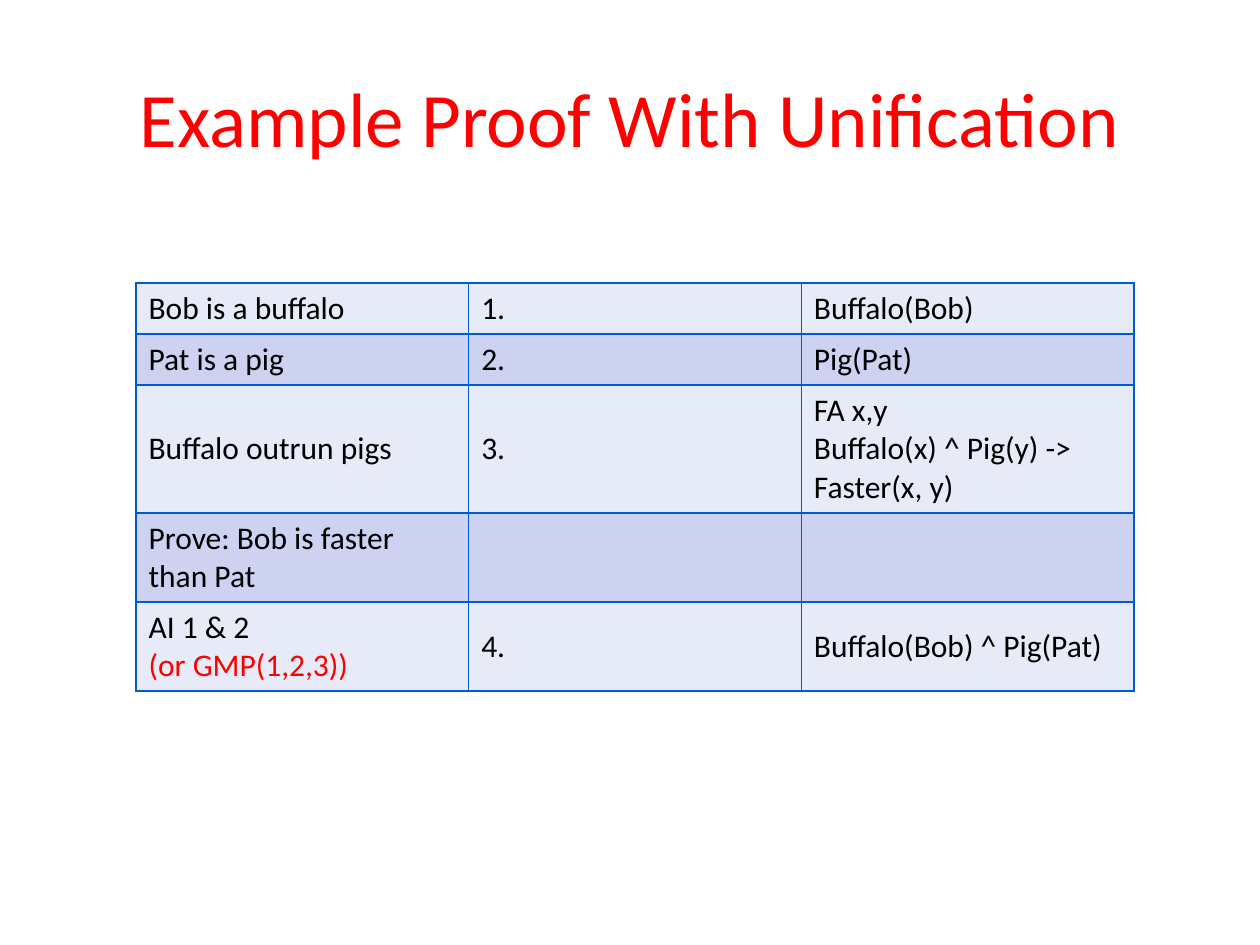
import dataclasses

import pptx
import pptx.dml.color
import pptx.enum.text
import pptx.oxml
import pptx.oxml.ns
import pptx.util

PX = 914400 / 126
FONT = "Calibri"
COLORS = {
    "title": "FF0000",
    "text": "000000",
    "accent": "FF0000",
    "border": "005BD3",
    "light": "E7EAF7",
    "dark": "CCD2EF",
}
BORDER_SIDES = ("lnL", "lnR", "lnT", "lnB")


@dataclasses.dataclass(frozen=True)
class Line:
    text: str
    color: str = "text"


@dataclasses.dataclass(frozen=True)
class ProofStep:
    height: int
    claim: tuple[Line, ...]
    number: tuple[Line, ...] = ()
    formula: tuple[Line, ...] = ()


STEPS = (
    ProofStep(51, (Line("Bob is a buffalo"),), (Line("1."),), (Line("Buffalo(Bob)"),)),
    ProofStep(51, (Line("Pat is a pig"),), (Line("2."),), (Line("Pig(Pat)"),)),
    ProofStep(
        128,
        (Line("Buffalo outrun pigs"),),
        (Line("3."),),
        (Line("FA x,y"), Line("Buffalo(x) ^ Pig(y) -> Faster(x, y)")),
    ),
    ProofStep(89, (Line("Prove: Bob is faster than Pat"),)),
    ProofStep(
        89,
        (Line("AI 1 & 2"), Line("(or GMP(1,2,3))", "accent")),
        (Line("4."),),
        (Line("Buffalo(Bob) ^ Pig(Pat)"),),
    ),
)


def px(length: int) -> pptx.util.Emu:
    return pptx.util.Emu(round(length * PX))


def rgb(name: str) -> pptx.dml.color.RGBColor:
    return pptx.dml.color.RGBColor.from_string(COLORS[name])


def write_lines(paragraph, lines: tuple[Line, ...], size: int) -> None:
    """Write the lines into one paragraph, with line breaks between them."""
    for index, line in enumerate(lines):
        if index:
            paragraph.add_line_break()
        span = paragraph.add_run()
        span.text = line.text
        span.font.color.rgb = rgb(line.color)
        for name, value in {"name": FONT, "size": pptx.util.Pt(size)}.items():
            setattr(span.font, name, value)


def add_title(page, text: str) -> None:
    box = page.shapes.add_textbox(px(63), px(38), px(1134), px(158))
    frame_format = {
        "word_wrap": True,
        "vertical_anchor": pptx.enum.text.MSO_ANCHOR.MIDDLE,
    }
    for name, value in frame_format.items():
        setattr(box.text_frame, name, value)
    para = box.text_frame.paragraphs[0]
    para.alignment = pptx.enum.text.PP_ALIGN.CENTER
    write_lines(para, (Line(text, "title"),), 44)


def fill_cell(cell, lines: tuple[Line, ...], fill: str) -> None:
    cell.vertical_anchor = pptx.enum.text.MSO_ANCHOR.MIDDLE
    write_lines(cell.text_frame.paragraphs[0], lines, 18)
    properties = cell._tc.get_or_add_tcPr()
    for side in BORDER_SIDES:
        properties.append(pptx.oxml.parse_xml(
            f'<a:{side} {pptx.oxml.ns.nsdecls("a")} w="12700"><a:solidFill>'
            f'<a:srgbClr val="{COLORS["border"]}"/></a:solidFill></a:{side}>'
        ))
    cell.fill.solid()
    cell.fill.fore_color.rgb = rgb(fill)


def add_proof_table(page, steps: tuple[ProofStep, ...]) -> None:
    height = sum(step.height for step in steps)
    table = page.shapes.add_table(
        len(steps), 3, px(136), px(283), px(998), px(height)
    ).table
    table.first_row = False
    for row_index, step in enumerate(steps):
        table.rows[row_index].height = px(step.height)
        fill = "dark" if row_index % 2 else "light"
        for column, lines in enumerate((step.claim, step.number, step.formula)):
            fill_cell(table.cell(row_index, column), lines, fill)


def main() -> None:
    deck = pptx.Presentation()
    deck.slide_width, deck.slide_height = px(1260), px(945)
    page = deck.slides.add_slide(deck.slide_layouts[6])
    add_title(page, "Example Proof With Unification")
    add_proof_table(page, STEPS)
    deck.save("out.pptx")


if __name__ == "__main__":
    main()
